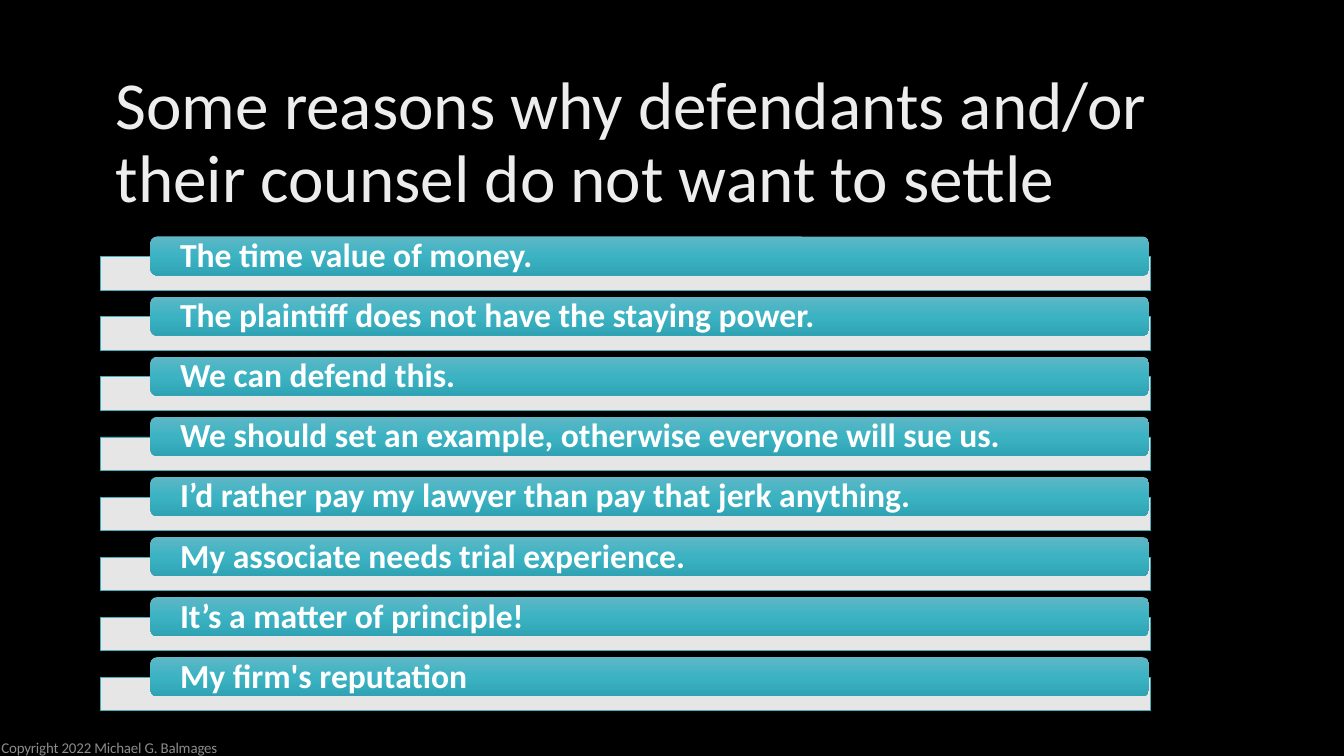
from lxml import etree
from pptx import Presentation
from pptx.dml.color import RGBColor
from pptx.enum.shapes import MSO_SHAPE
from pptx.enum.text import MSO_ANCHOR, PP_ALIGN
from pptx.oxml.ns import qn
from pptx.util import Inches, Pt

RECTANGLE, ROUNDED = MSO_SHAPE.RECTANGLE, MSO_SHAPE.ROUNDED_RECTANGLE
MIDDLE, LEFT = MSO_ANCHOR.MIDDLE, PP_ALIGN.LEFT

TITLE = "Some reasons why defendants and/or their counsel do not want to settle"
REASONS = [
    "The time value of money.",
    "The plaintiff does not have the staying power.",
    "We can defend this.",
    "We should set an example, otherwise everyone will sue us.",
    "I’d rather pay my lawyer than pay that jerk anything.",
    "My associate needs trial experience.",
    "It’s a matter of principle!",
    "My firm's reputation",
]
COPYRIGHT = "Copyright 2022 Michael G. Balmages"

THEME = {
    "font": "Calibri",
    "background": "000000",
    "title": "EDEDED",
    "label": "FFFFFF",
    "copyright": "8C8C8C",
    "tray": "FFFFFF",
    "tray_opacity": 90,
    "tray_line": "41AEBD",
    "bar": [(0, "5FB7C5"), (50, "3BB3C3"), (100, "2FA3B3")],
    "title_size": 36,
    "label_size": 18,
    "copyright_size": 8,
    "copyright_tracking": -0.1,
}

WIDTH = Inches(10)
HEIGHT = WIDTH * 9 // 16
MARGIN = 0.75
FIRST_ROW, LAST_ROW = 1.76, 4.89
ROW_STEP = (LAST_ROW - FIRST_ROW) / (len(REASONS) - 1)
TRAY_WIDTH, TRAY_HEIGHT, TRAY_DROP = 7.81, 0.25, 0.15
BAR_LEFT, BAR_WIDTH, BAR_HEIGHT = 1.12, 7.43, 0.29
LABEL_LEFT, LABEL_WIDTH, LABEL_HEIGHT, LABEL_DROP = 1.13, 7.4, 0.26, 0.02


def color(name):
    return RGBColor.from_string(THEME[name])


def add_text(shapes, area, text, role, bold=False, insets=(0, 0, 0, 0), spacing=None):
    """Add a one-paragraph box; role picks colour, size and tracking."""
    box = shapes.add_textbox(*map(Inches, area))
    frame = box.text_frame
    frame.word_wrap = True
    frame.vertical_anchor = MIDDLE
    (frame.margin_left, frame.margin_top,
     frame.margin_right, frame.margin_bottom) = map(Inches, insets)
    para = frame.paragraphs[0]
    para.alignment = LEFT
    para.line_spacing = spacing
    span = para.add_run()
    span.text = text
    span.font.name = THEME["font"]
    span.font.size = Pt(THEME[role + "_size"])
    span.font.bold = bold
    span.font.color.rgb = color(role)
    tracking = THEME.get(role + "_tracking")
    if tracking:
        span._r.get_or_add_rPr().set("spc", str(round(tracking * 100)))


def add_block(shapes, kind, *area):
    block = shapes.add_shape(kind, *map(Inches, area))
    block.shadow.inherit = False
    return block


def fill_gradient(shape, stops):
    """Fill from top to bottom with any number of (percent, colour) stops."""
    shape.fill.gradient()
    shape.fill.gradient_angle = 270
    stop_list = shape._element.spPr.find(qn("a:gradFill")).find(qn("a:gsLst"))
    for old in list(stop_list):
        stop_list.remove(old)
    for percent, value in stops:
        stop = etree.SubElement(stop_list, qn("a:gs"), pos=str(percent * 1000))
        etree.SubElement(stop, qn("a:srgbClr"), val=value)


def add_reason(shapes, row, text):
    top = FIRST_ROW + row * ROW_STEP
    tray = add_block(shapes, RECTANGLE, MARGIN, top + TRAY_DROP, TRAY_WIDTH, TRAY_HEIGHT)
    tray.fill.solid()
    tray.fill.fore_color.rgb = color("tray")
    tint = tray._element.spPr.find(qn("a:solidFill"))[0]
    etree.SubElement(tint, qn("a:alpha"), val=str(THEME["tray_opacity"] * 1000))
    tray.line.color.rgb = color("tray_line")
    tray.line.width = Pt(0.5)

    bar = add_block(shapes, ROUNDED, BAR_LEFT, top, BAR_WIDTH, BAR_HEIGHT)
    fill_gradient(bar, THEME["bar"])
    bar.line.fill.background()

    add_text(shapes, (LABEL_LEFT, top + LABEL_DROP, LABEL_WIDTH, LABEL_HEIGHT), text,
             "label", bold=True, insets=(0.21, 0, 0.21, 0), spacing=0.9)


def main():
    deck = Presentation()
    deck.slide_width, deck.slide_height = WIDTH, HEIGHT
    slide = deck.slides.add_slide(deck.slide_layouts[6])
    slide.background.fill.solid()
    slide.background.fill.fore_color.rgb = color("background")

    add_text(slide.shapes, (MARGIN, 0.53, 8.62, 1.09), TITLE, "title",
             insets=(0.11, 0.05, 0.1, 0.05), spacing=0.9)
    reason_list = slide.shapes.add_group_shape()
    for row, reason in enumerate(REASONS):
        add_reason(reason_list.shapes, row, reason)
    add_text(slide.shapes, (0, 5.49, 3.82, 0.14), COPYRIGHT, "copyright",
             insets=(0.01, 0, 0, 0))
    deck.save("out.pptx")


if __name__ == "__main__":
    main()
